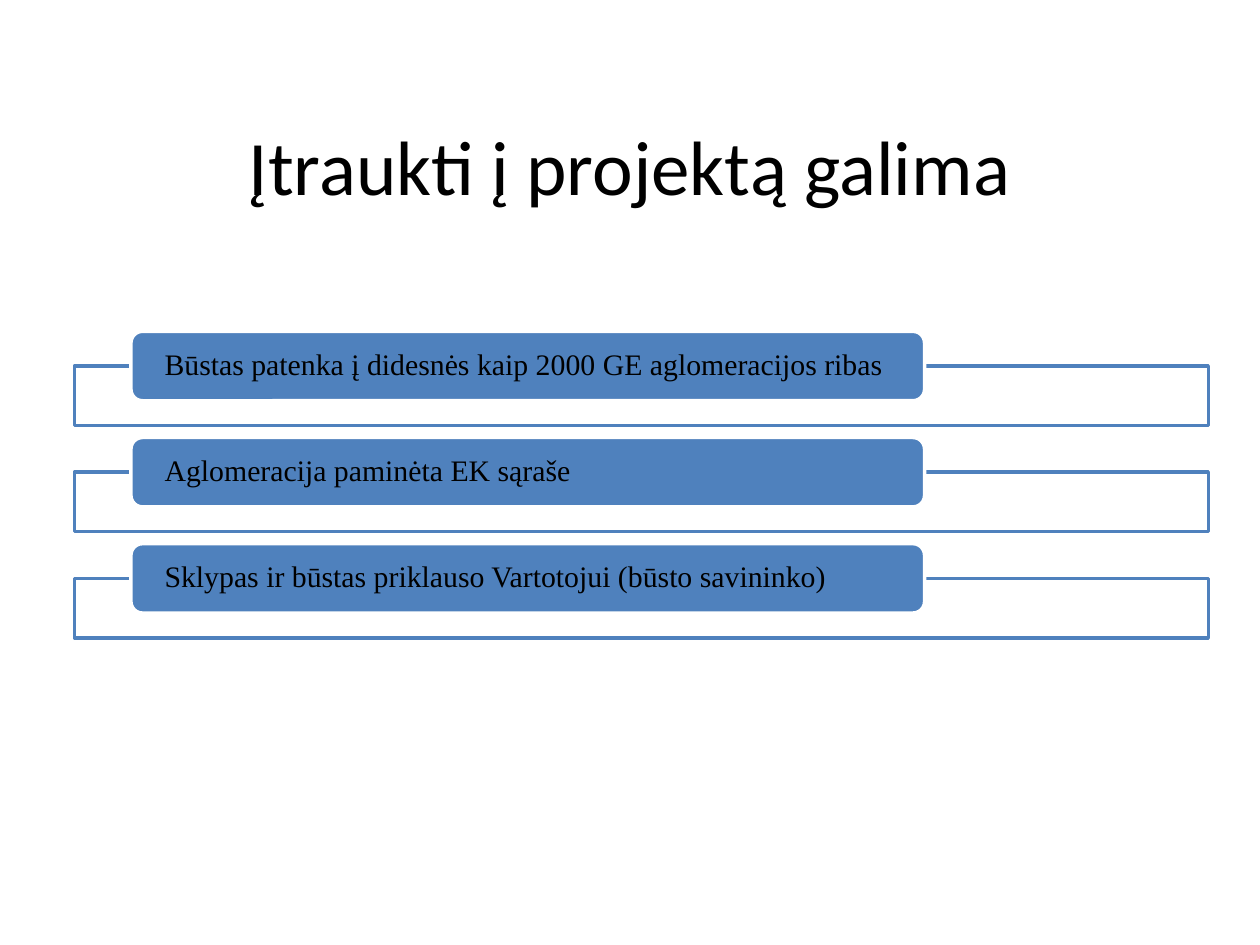
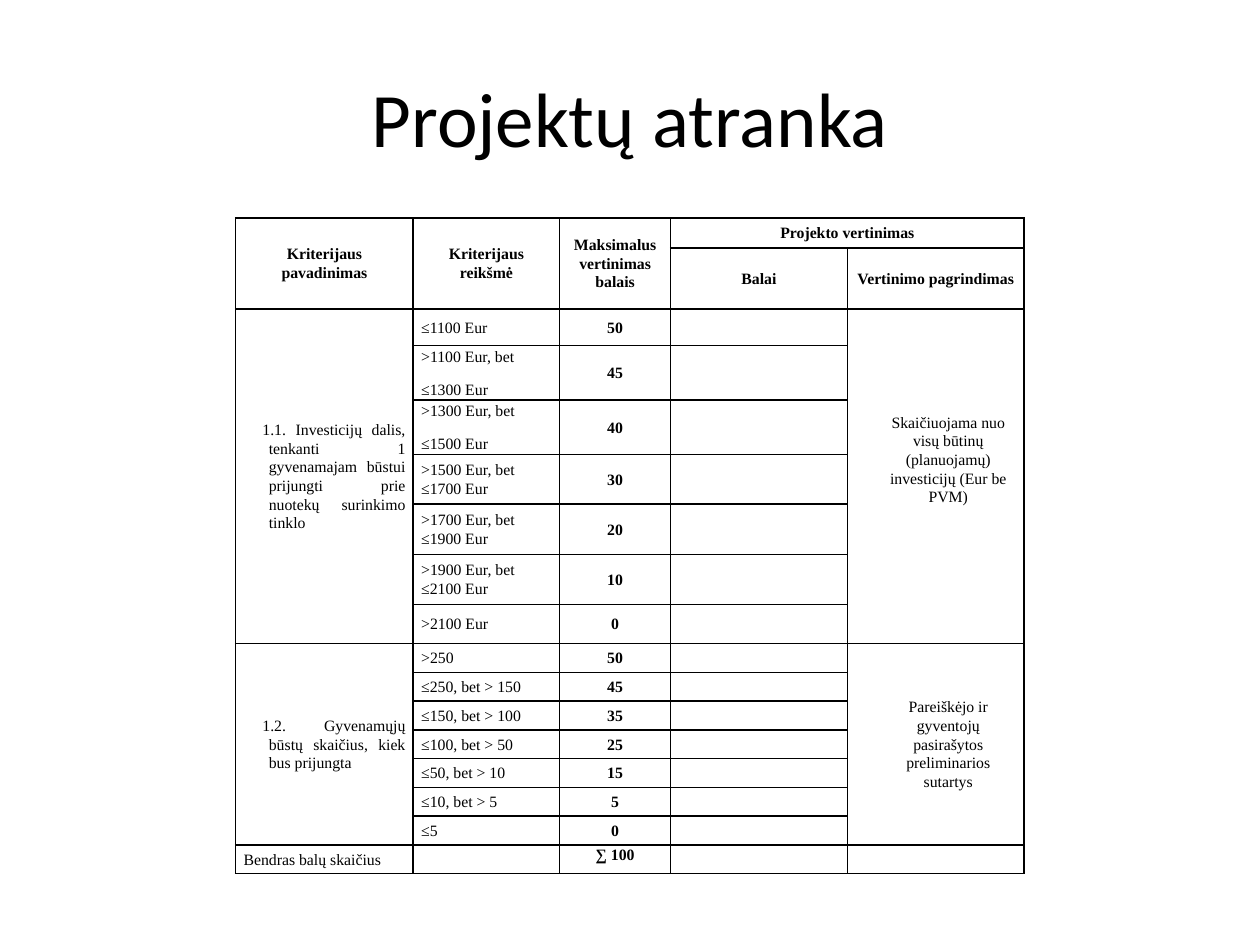
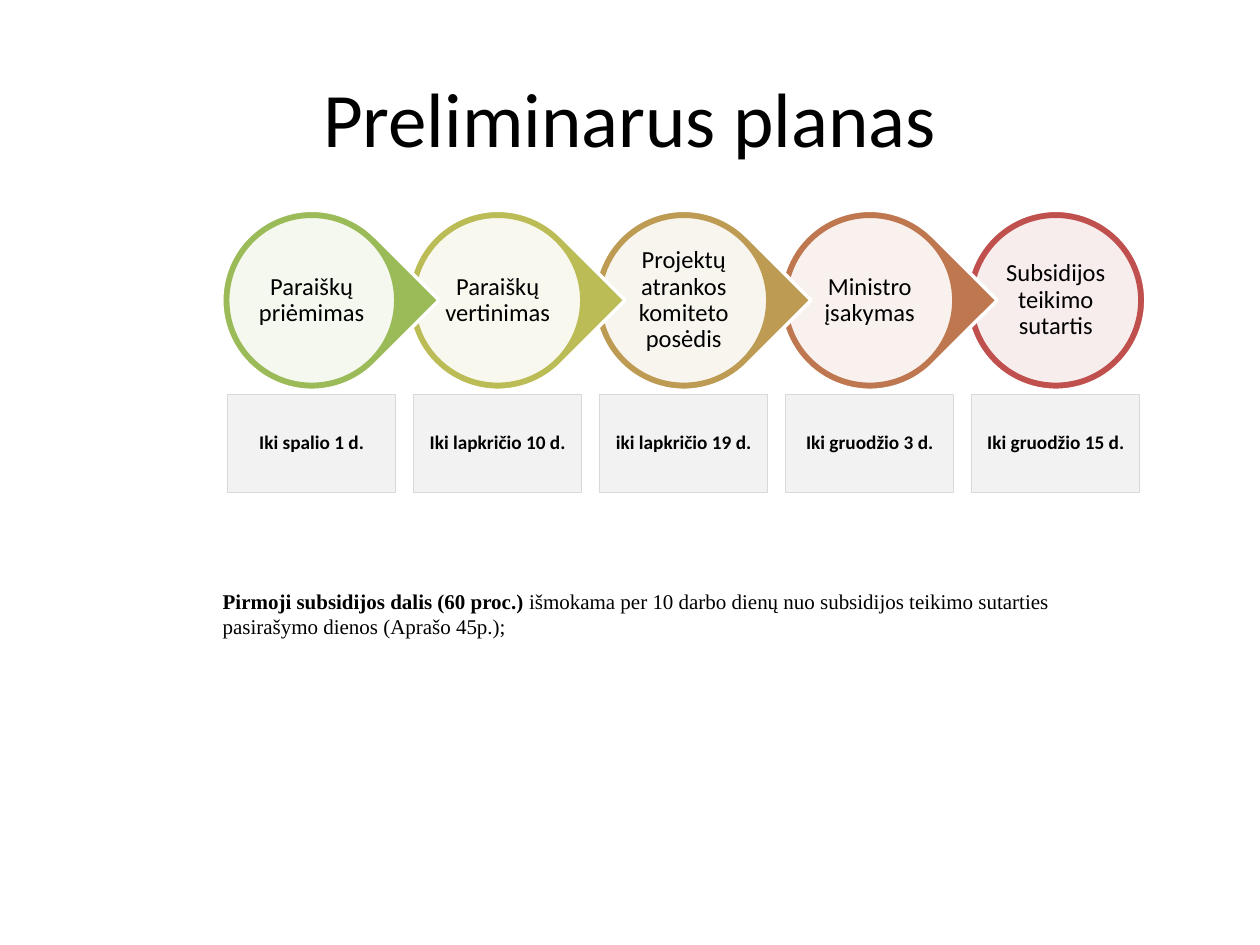
from lxml import etree
from pptx import Presentation
from pptx.dml.color import RGBColor
from pptx.enum.shapes import MSO_SHAPE
from pptx.enum.text import MSO_ANCHOR, PP_ALIGN
from pptx.oxml.ns import qn
from pptx.util import Cm, Pt

RECT, ROUND = MSO_SHAPE.RECTANGLE, MSO_SHAPE.ROUNDED_RECTANGLE
OVAL, TEAR = MSO_SHAPE.OVAL, MSO_SHAPE.TEAR
LEFT, CENTER, JUST = PP_ALIGN.LEFT, PP_ALIGN.CENTER, PP_ALIGN.JUSTIFY
TOP, MIDDLE = MSO_ANCHOR.TOP, MSO_ANCHOR.MIDDLE

SANS, SERIF = "Calibri", "Times New Roman"
COLORS = {
    "black": "000000", "white": "FFFFFF", "blue": "4F81BD",
    "pale": "F2F2F2", "gray": "D9D9D9",
    "green": "9BBB59", "olive": "BCBC56", "gold": "BD9B53",
    "rust": "BF7750", "red": "C0504D",
}

RULES = [
    "Būstas patenka į didesnės kaip 2000 GE aglomeracijos ribas",
    "Aglomeracija paminėta EK sąraše",
    "Sklypas ir būstas priklauso Vartotojui (būsto savininko)",
]

# Table: column widths and row heights in cm
COLS = [3.58, 2.95, 2.24, 3.56, 3.56]
ROWS = [0.61, 0.64, 0.74, 1.04, 1.04, 1, 1.01, 1.01, 0.79] + [0.58] * 8
HEADS = ["Kriterijaus pavadinimas", "Kriterijaus reikšmė",
         "Maksimalus vertinimas balais", "Projekto vertinimas"]
GROUPS = [
    ("1.1. Investicijų dalis, tenkanti 1 gyvenamajam būstui prijungti "
     "prie nuotekų surinkimo tinklo",
     "Skaičiuojama nuo visų būtinų (planuojamų) investicijų (Eur be PVM)",
     0.67,
     [("≤1100 Eur", 50), (">1100 Eur, bet\n≤1300 Eur", 45),
      (">1300 Eur, bet\n≤1500 Eur", 40), (">1500 Eur, bet ≤1700 Eur", 30),
      (">1700 Eur, bet ≤1900 Eur", 20), (">1900 Eur, bet ≤2100 Eur", 10),
      (">2100 Eur", 0)]),
    ("1.2. Gyvenamųjų būstų skaičius, kiek bus prijungta",
     "Pareiškėjo ir gyventojų pasirašytos preliminarios sutartys",
     0,
     [(">250", 50), ("≤250, bet > 150", 45), ("≤150, bet > 100", 35),
      ("≤100, bet > 50", 25), ("≤50, bet > 10", 15), ("≤10, bet > 5", 5),
      ("≤5", 0)]),
]

STEPS = [
    ("Paraiškų priėmimas", "Iki spalio 1 d.", "green"),
    ("Paraiškų vertinimas", "Iki lapkričio 10 d.", "olive"),
    ("Projektų atrankos komiteto posėdis", "iki lapkričio 19 d.", "gold"),
    ("Ministro įsakymas", "Iki gruodžio 3 d.", "rust"),
    ("Subsidijos teikimo sutartis", "Iki gruodžio 15 d.", "red"),
]


def rgb(name):
    return RGBColor.from_string(COLORS[name])


def style(run, font, size, bold=False):
    run.font.name, run.font.size, run.font.bold = font, Pt(size), bold
    run.font.color.rgb = rgb("black")


def write(frame, text, font, size, bold=False, align=CENTER, anchor=MIDDLE,
          space=None, pad=0, pad_y=0):
    frame.word_wrap = True
    frame.vertical_anchor = anchor
    frame.margin_left = frame.margin_right = Cm(pad)
    frame.margin_top = frame.margin_bottom = Cm(pad_y)
    frame.text = text
    for para in frame.paragraphs:
        para.alignment = align
        para.line_spacing = space
        for run in para.runs:
            style(run, font, size, bold)


def add_title(slide, text, top=0.76):
    box = slide.shapes.add_textbox(Cm(1.27), Cm(top), Cm(22.86), Cm(3.18))
    write(box.text_frame, text, SANS, 44, pad=0.25, pad_y=0.13)


def add_block(slide, kind, left, top, wide, high, fill, line, width=2,
              alpha=None):
    shape = slide.shapes.add_shape(kind, Cm(left), Cm(top), Cm(wide), Cm(high))
    shape.shadow.inherit = False
    shape.fill.solid()
    shape.fill.fore_color.rgb = rgb(fill)
    shape.line.color.rgb = rgb(line)
    shape.line.width = Pt(width)
    if alpha:
        color = shape.fill._xPr.find(qn("a:solidFill"))[0]
        etree.SubElement(color, qn("a:alpha"), val=str(alpha * 1000))
    return shape


def add_rule(slide, row, text):
    top = 6.68 + row * 2.14
    add_block(slide, RECT, 1.5, top + 0.7, 22.86, 1.2, "white", "blue",
              alpha=90)
    label = add_block(slide, ROUND, 2.64, top, 16, 1.4, "blue", "white")
    write(label.text_frame, text, SERIF, 17, align=LEFT, space=0.9, pad=0.61)


def add_step(slide, col, name, date, color):
    left, top = 4.47 + col * 3.75, 4.24
    last = col == len(STEPS) - 1
    drop = add_block(slide, OVAL if last else TEAR, left, top, 3.63, 3.63,
                     color, "white")
    if not last:
        drop.adjustments[0] = 1
        drop.rotation = 45
    disc = add_block(slide, OVAL, left + 0.12, top + 0.12, 3.39, 3.39,
                     "white", color, alpha=90)
    write(disc.text_frame, name, SANS, 14, space=0.9, pad=0.05, pad_y=0.05)
    card = add_block(slide, RECT, left + 0.12, 7.95, 3.39, 1.98,
                     "pale", "gray", 0.75)
    write(card.text_frame, date, SANS, 11, bold=True, space=0.9)


def add_note(slide, lead, rest):
    box = slide.shapes.add_textbox(Cm(4.24), Cm(11.73), Cm(19), Cm(1.42))
    write(box.text_frame, lead, SERIF, 12, bold=True, align=LEFT, anchor=TOP,
          pad=0.25, pad_y=0.13)
    run = box.text_frame.paragraphs[0].add_run()
    run.text = rest
    style(run, SERIF, 12)


def edge_cell(cell):
    props = cell._tc.get_or_add_tcPr()
    for index, side in enumerate(("lnL", "lnR", "lnT", "lnB")):
        line = etree.Element(qn("a:" + side), w=str(Pt(1)))
        fill = etree.SubElement(line, qn("a:solidFill"))
        etree.SubElement(fill, qn("a:srgbClr"), val=COLORS["black"])
        props.insert(index, line)


def fill_cell(cell, text, bold=False, align=CENTER, anchor=MIDDLE,
              indent=0, first=0, foot=0):
    cell.vertical_anchor = anchor
    cell.margin_bottom = Cm(foot)
    cell.text_frame.text = text
    for para in cell.text_frame.paragraphs:
        para.alignment = align
        para.line_spacing = 1.07
        para.space_after = Pt(8)
        props = para._p.get_or_add_pPr()
        props.set("marL", str(Cm(indent)))
        props.set("indent", str(Cm(first)))
        for run in para.runs:
            style(run, SERIF, 9, bold)


def add_grid(slide):
    frame = slide.shapes.add_table(len(ROWS), len(COLS), Cm(4.75), Cm(4.39),
                                   Cm(sum(COLS)), Cm(sum(ROWS)))
    table = frame.table
    table.first_row = table.horz_banding = False
    for col, wide in zip(table.columns, COLS):
        col.width = Cm(wide)
    for row, high in zip(table.rows, ROWS):
        row.height = Cm(high)
    for cell in table.iter_cells():
        cell.fill.background()
        cell.margin_left = cell.margin_right = Cm(0.16)
        cell.margin_top = cell.margin_bottom = 0
        edge_cell(cell)
        # Small type keeps empty rows low
        etree.SubElement(cell.text_frame.paragraphs[0]._p,
                         qn("a:endParaRPr"), sz="900")

    # Heading rows
    for col, head in enumerate(HEADS):
        fill_cell(table.cell(0, col), head, bold=True)
        if col < 3:
            table.cell(0, col).merge(table.cell(1, col))
    table.cell(0, 3).merge(table.cell(0, 4))
    fill_cell(table.cell(1, 3), "Balai", bold=True)
    fill_cell(table.cell(1, 4), "Vertinimo pagrindimas", bold=True)

    # Criteria groups
    row = 2
    for name, basis, foot, marks in GROUPS:
        end = row + len(marks) - 1
        fill_cell(table.cell(row, 0), name, align=JUST, indent=0.51,
                  first=-0.13)
        fill_cell(table.cell(row, 4), basis, indent=0.51, foot=foot)
        for col in (0, 4):
            table.cell(row, col).merge(table.cell(end, col))
        for step, (value, points) in enumerate(marks, row):
            fill_cell(table.cell(step, 1), value, align=LEFT)
            fill_cell(table.cell(step, 2), str(points), bold=True)
        row = end + 1

    # Total row
    fill_cell(table.cell(row, 0), "Bendras balų skaičius", align=LEFT)
    fill_cell(table.cell(row, 2), "∑ 100", bold=True, anchor=TOP)


def main():
    deck = Presentation()
    deck.slide_width, deck.slide_height = Cm(25.4), Cm(19.05)
    blank = deck.slide_layouts[6]

    # Conditions
    slide = deck.slides.add_slide(blank)
    add_title(slide, "Įtraukti į projektą galima", 1.73)
    for row, text in enumerate(RULES):
        add_rule(slide, row, text)

    # Selection table
    slide = deck.slides.add_slide(blank)
    add_title(slide, "Projektų atranka")
    add_grid(slide)

    # Plan, drawn from the last step so that each tip overlaps the next
    slide = deck.slides.add_slide(blank)
    add_title(slide, "Preliminarus planas")
    add_note(slide, "Pirmoji subsidijos dalis (60 proc.) ",
             "išmokama per 10 darbo dienų nuo subsidijos teikimo sutarties "
             "pasirašymo dienos (Aprašo 45p.);")
    for col, step in reversed(list(enumerate(STEPS))):
        add_step(slide, col, *step)

    deck.save("out.pptx")


if __name__ == "__main__":
    main()
